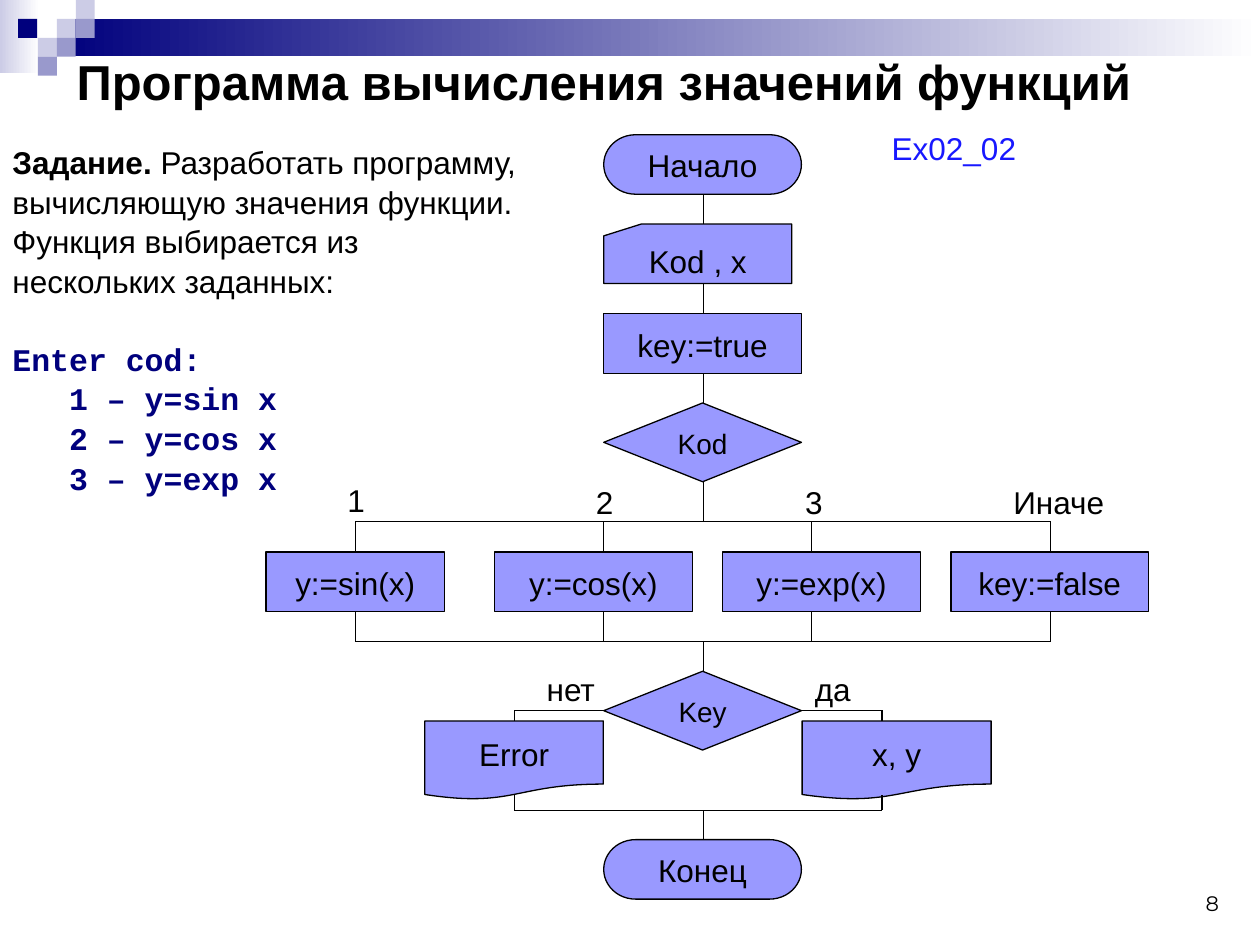
"""Build a slide with the flowchart of a function calculator."""
from lxml import etree
from pptx import Presentation
from pptx import util as u
from pptx.dml.color import RGBColor
from pptx.enum import shapes, text
from pptx.oxml.ns import qn

Pt = u.Pt
Kind = shapes.MSO_SHAPE
Align = text.PP_ALIGN
Anchor = text.MSO_ANCHOR


def color(code):
    return RGBColor.from_string(code)


def write(shape, lines, size=18, tint="000000", bold=False, font="Arial",
          align=Align.LEFT, anchor=Anchor.TOP, wrap=False):
    frame = shape.text_frame
    frame.word_wrap = wrap
    frame.vertical_anchor = anchor
    frame.text = lines
    for para in frame.paragraphs:
        para.alignment = align
        para.line_spacing = 1.05
        para.font.size = Pt(size)
        para.font.name = font
        para.font.bold = bold
        para.font.color.rgb = color(tint)
    return frame


deck = Presentation()
deck.slide_width, deck.slide_height = Pt(720), Pt(540)
slide = deck.slides.add_slide(deck.slide_layouts[6])
items = slide.shapes

# left, top, width, height, colours
decor = [
    (0, 0, 22.5, 42, "CCCCE6", "FFFFFF"),
    (32.5, 10.8, 687.5, 21.4, "00007D", "FFFFFF"),
    (32.5, 10.8, 10.8, 10.8, "CCCCE6"),
    (43.3, 0, 10.8, 10.8, "CCCCE6"),
    (43.3, 10.8, 10.8, 10.8, "9999CC"),
    (21.7, 21.6, 10.8, 10.8, "CCCCE6"),
    (10.4, 10.8, 10.8, 10.8, "00007D"),
    (32.5, 21.6, 10.8, 10.8, "9999CC"),
    (21.7, 32.4, 10.8, 10.8, "9999CC"),
]
for left, top, wide, high, *tints in decor:
    tile = items.add_shape(Kind.RECTANGLE, Pt(left), Pt(top), Pt(wide), Pt(high))
    tile.shadow.inherit = False
    tile.line.fill.background()
    if len(tints) == 1:
        tile.fill.solid()
        tile.fill.fore_color.rgb = color(tints[0])
    else:
        tile.fill.gradient()
        tile.fill.gradient_angle = 0
        for stop, tint in zip(tile.fill.gradient_stops, tints):
            stop.color.rgb = color(tint)

mid, low, high = 402, 34, 45
blocks = [
    (Kind.FLOWCHART_TERMINATOR, 345, 77, 113, low, "Начало"),
    (Kind.FLOWCHART_CARD, 345, 128, 107.5, low, "Kod , x"),
    (Kind.RECTANGLE, 345, 179.3, 113, low, "key:=true"),
    (Kind.DIAMOND, 345, 230.3, 113, high, "Kod"),
    (Kind.RECTANGLE, 152, 315.5, 102, low, "y:=sin(x)"),
    (Kind.RECTANGLE, 282.6, 315.5, 113, low, "y:=cos(x)"),
    (Kind.RECTANGLE, 413, 315.5, 113, low, "y:=exp(x)"),
    (Kind.RECTANGLE, 543.4, 315.5, 113, low, "key:=false"),
    (Kind.DIAMOND, 345, 383.6, 113, high, "Key"),
    (Kind.FLOWCHART_DOCUMENT, 242.8, 412, 102, high, "Error"),
    (Kind.FLOWCHART_DOCUMENT, 458.4, 412, 108, high, "x, y"),
    (Kind.FLOWCHART_TERMINATOR, 345, 479.8, 113, low, "Конец"),
]
for kind, left, top, wide, tall, label in blocks:
    block = items.add_shape(kind, Pt(left), Pt(top), Pt(wide), Pt(tall))
    block.shadow.inherit = False
    block.fill.solid()
    block.fill.fore_color.rgb = color("9999FF")
    block.line.color.rgb = color("000000")
    block.line.width = Pt(0.75)
    write(block, label, 16 if kind == Kind.DIAMOND else 18,
          align=Align.CENTER, anchor=Anchor.MIDDLE)

fork, join, end = 298.2, 366.6, 463
arms = [203, 345, 463.8, 600.3]
links = [(mid, a, mid, b) for a, b in [
    (111, 128), (162, 179.3), (213.3, 230.3), (275.3, fork),
    (join, 383.6), (end, 479.8)]]
links += [(arms[0], y, arms[-1], y) for y in (fork, join)]
for x in arms:
    links += [(x, fork, x, 315.5), (x, 349.5, x, join)]
for x, side in [(294, 345), (504, 458)]:
    links += [(side, 406, x, 406), (x, 406, x, 412), (x, 454.5, x, end)]
links.append((294, end, 504, end))
for ends in links:
    link = items.add_connector(shapes.MSO_CONNECTOR.STRAIGHT, *map(Pt, ends))
    link.line.color.rgb = color("000000")
    link.line.width = Pt(0.75)
    etree.SubElement(link._element.spPr, qn("a:effectLst"))

notes = [
    (333.5, 271.5, 24.5, 29, "2", {}),
    (191.5, 270, 24.5, 29, "1", {}),
    (453, 271.5, 24.5, 29, "3", {}),
    (572, 271.5, 67, 29, "Иначе", {}),
    (458.5, 378, 35, 29, "да", {}),
    (305.3, 378, 45.5, 29, "нет", {}),
    (502.5, 69, 108, 29, "Ex02_02", {"tint": "1818FF", "wrap": True}),
    (36.7, 31.7, 683, 28, "Программа вычисления значений функций",
     {"size": 28, "bold": True, "anchor": Anchor.MIDDLE, "wrap": True}),
    (535.7, 491, 168, 36, "8", {"size": 12, "font": "Montserrat", "wrap": True,
                                "align": Align.RIGHT, "anchor": Anchor.BOTTOM}),
]
for left, top, wide, tall, label, style in notes:
    box = items.add_textbox(Pt(left), Pt(top), Pt(wide), Pt(tall))
    write(box, label, **style)

task = items.add_textbox(Pt(0), Pt(77), Pt(309), Pt(204))
menu = ["Enter cod:", "1 – y=sin x", "2 – y=cos x", "3 – y=exp x"]
frame = write(task, "\n".join(["Задание. "] + menu), wrap=True)
intro, *rows = frame.paragraphs
intro.runs[0].font.bold = True
intro.add_run().text = ("Разработать программу, вычисляющую значения функции. "
                        "Функция выбирается из нескольких заданных:")
for row in rows:
    row.font.name = "Courier New"
    row.font.bold = True
    row.font.color.rgb = color("00007D")
rows[0].space_before = Pt(21.8)
for row in rows[1:]:
    row._p.get_or_add_pPr().set("marL", str(Pt(32.4)))

deck.save("out.pptx")
